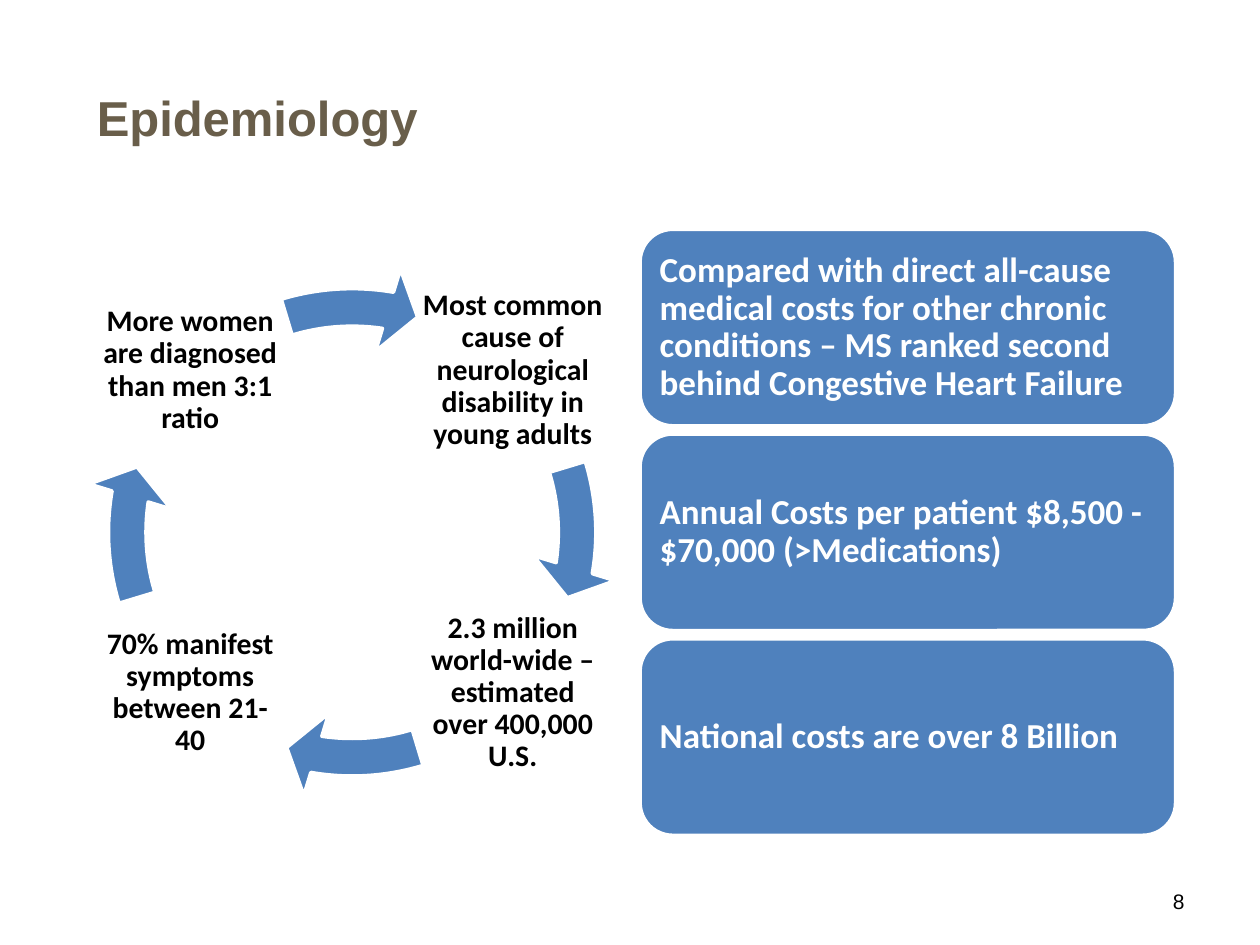
from pptx import Presentation
from pptx.dml.color import RGBColor
from pptx.enum.shapes import MSO_SHAPE
from pptx.enum.text import MSO_ANCHOR, PP_ALIGN
from pptx.util import Inches, Pt

CIRCULAR_ARROW = MSO_SHAPE.CIRCULAR_ARROW
ROUNDED = MSO_SHAPE.ROUNDED_RECTANGLE
MIDDLE = MSO_ANCHOR.MIDDLE
LEFT, CENTER, RIGHT = PP_ALIGN.LEFT, PP_ALIGN.CENTER, PP_ALIGN.RIGHT

COLORS = {"title": "695E4A", "accent": "4F81BD", "light": "FFFFFF", "dark": "000000"}

CYCLE_LEFT, CYCLE_TOP, CYCLE_SIZE = 0.67, 2.1, 4.25
QUARTER_TURN, FULL_TURN = 54, 216
FACTS = [
    ("Most common cause of neurological disability in young adults", 3.32, 2.19),
    ("2.3 million world-wide – estimated over 400,000 U.S.", 3.32, 4.75),
    ("70% manifest symptoms between 21-40", 0.76, 4.75),
    ("More women are diagnosed than men 3:1 ratio", 0.76, 2.19),
]
COSTS = [
    "Compared with direct all-cause medical costs for other chronic conditions"
    " – MS ranked second behind Congestive Heart Failure",
    "Annual Costs per patient $8,500 - $70,000 (>Medications)",
    "National costs are over 8 Billion",
]


def write_text(shape, text, size, color, font="Calibri", bold=True, align=LEFT,
               spacing=None, inset=None):
    """Fill a shape with one formatted, vertically centred paragraph."""
    frame = shape.text_frame
    frame.word_wrap = True
    frame.vertical_anchor = MIDDLE
    if inset is not None:
        frame.margin_left = frame.margin_right = Inches(inset)
        frame.margin_top = frame.margin_bottom = Inches(inset)
    paragraph = frame.paragraphs[0]
    paragraph.alignment = align
    if spacing:
        paragraph.line_spacing = spacing
    run = paragraph.add_run()
    run.text = text
    run.font.name = font
    run.font.size = Pt(size)
    run.font.bold = bold
    run.font.color.rgb = RGBColor.from_string(COLORS[color])


def add_label(slide, text, left, top, width, height, **text_format):
    """Add a text box with formatted text."""
    box = slide.shapes.add_textbox(Inches(left), Inches(top), Inches(width), Inches(height))
    write_text(box, text, **text_format)


def add_block(slide, preset, left, top, width, height):
    """Add an accent-filled shape with a light outline."""
    block = slide.shapes.add_shape(
        preset, Inches(left), Inches(top), Inches(width), Inches(height))
    block.shadow.inherit = False
    block.fill.solid()
    block.fill.fore_color.rgb = RGBColor.from_string(COLORS["accent"])
    block.line.color.rgb = RGBColor.from_string(COLORS["light"])
    block.line.width = Pt(2)
    return block


def add_cycle(slide):
    """Add the four facts, each followed by an arrow a quarter turn further on."""
    for step, (fact, left, top) in enumerate(FACTS):
        add_label(slide, fact, left, top, 1.5, 1.5, size=17, color="dark",
                  align=CENTER, spacing=0.9, inset=0.02)
        arrow = add_block(slide, CIRCULAR_ARROW, CYCLE_LEFT, CYCLE_TOP,
                          CYCLE_SIZE, CYCLE_SIZE)
        turn = step * QUARTER_TURN
        settings = (0.07, 4.65, 5.5 + turn, (205.85 + turn) % FULL_TURN, 0.08)
        for index, setting in enumerate(settings):
            arrow.adjustments[index] = setting


def add_costs(slide):
    """Stack the cost statements in rounded cards."""
    for row, cost in enumerate(COSTS):
        card = add_block(slide, ROUNDED, 5.08, 1.82 + row * 1.625, 4.25, 1.56)
        write_text(card, cost, size=20, color="light", spacing=0.9, inset=0.08)


def main():
    """Build and save the epidemiology slide."""
    deck = Presentation()
    deck.slide_width, deck.slide_height = Inches(10), Inches(7.5)
    slide = deck.slides.add_slide(deck.slide_layouts[6])
    add_label(slide, "Epidemiology", 0.67, 0.3, 8.66, 1.25, size=28, color="title",
              font="Arial")
    add_cycle(slide)
    add_costs(slide)
    add_label(slide, "8", 7.17, 6.95, 2.33, 0.4, size=12, color="dark",
              font="Arial", bold=False, align=RIGHT)
    deck.save("out.pptx")


if __name__ == "__main__":
    main()
